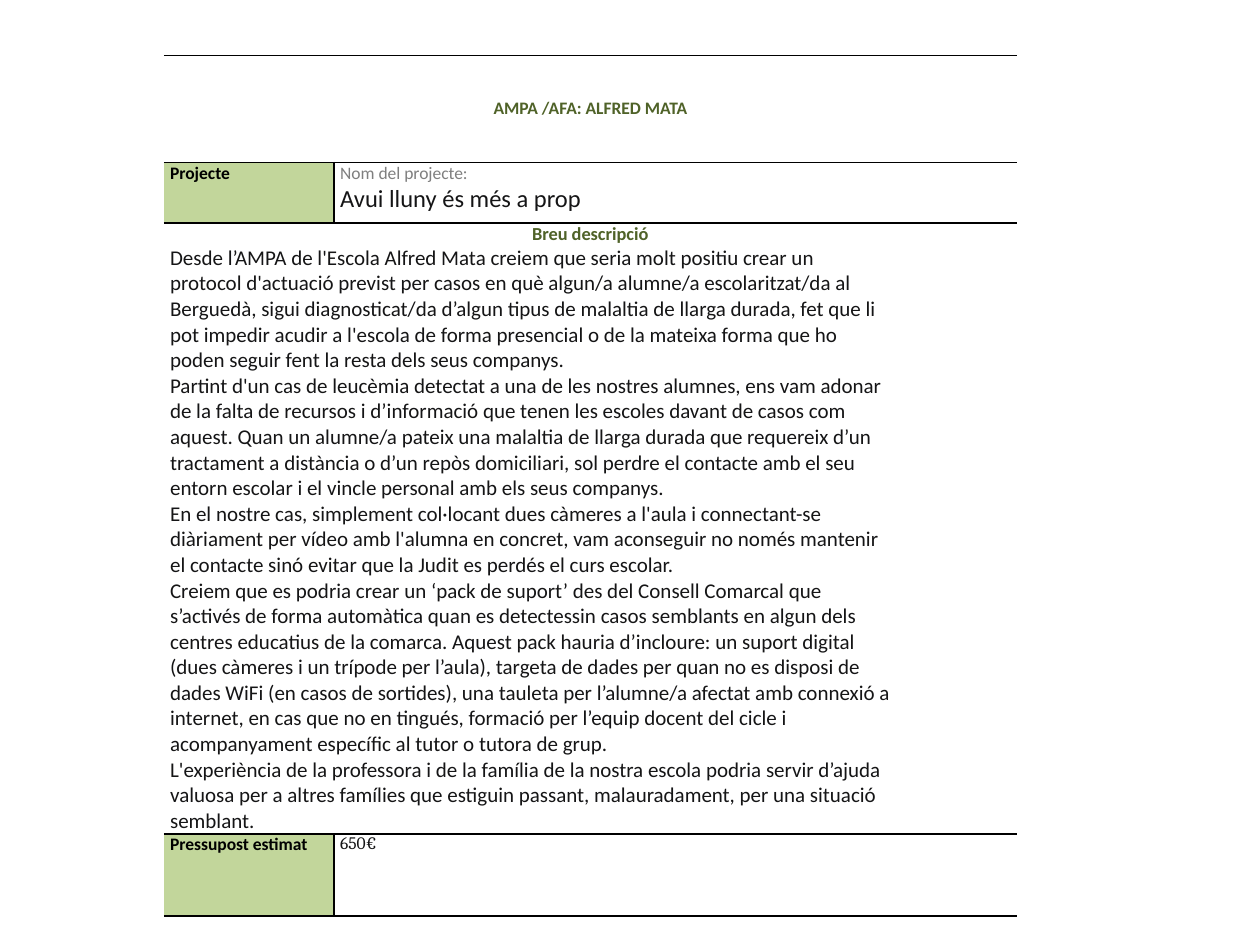
"""Build the project sheet slide of a school families' association."""
from dataclasses import dataclass

from lxml.etree import SubElement
from pptx import Presentation
from pptx.dml.color import RGBColor
from pptx.enum.text import MSO_ANCHOR as Anchor, PP_ALIGN as Align
from pptx.oxml.ns import qn
from pptx.table import Table, _Cell as Cell
from pptx.util import Inches, Pt

BLACK = RGBColor(0x00, 0x00, 0x00)
INK = RGBColor(0x15, 0x15, 0x16)
GREY = RGBColor(0x7F, 0x7F, 0x7F)
OLIVE = RGBColor(0x4F, 0x62, 0x28)
LABEL_GREEN = RGBColor(0xC2, 0xD6, 0x9B)

COLUMN_WIDTHS = (1.35, 5.42)
ROW_HEIGHTS = (0.85, 0.48, 4.55, 0.65)

PROPOSAL = """\
Desde l’AMPA de l'Escola Alfred Mata creiem que seria molt positiu crear un
protocol d'actuació previst per casos en què algun/a alumne/a escolaritzat/da al
Berguedà, sigui diagnosticat/da d’algun tipus de malaltia de llarga durada, fet que li
pot impedir acudir a l'escola de forma presencial o de la mateixa forma que ho
poden seguir fent la resta dels seus companys."""

BACKGROUND = """\
Partint d'un cas de leucèmia detectat a una de les nostres alumnes, ens vam adonar
de la falta de recursos i d’informació que tenen les escoles davant de casos com
aquest. Quan un alumne/a pateix una malaltia de llarga durada que requereix d’un
tractament a distància o d’un repòs domiciliari, sol perdre el contacte amb el seu
entorn escolar i el vincle personal amb els seus companys."""

EXPERIENCE = """\
En el nostre cas, simplement col·locant dues càmeres a l'aula i connectant-se
diàriament per vídeo amb l'alumna en concret, vam aconseguir no només mantenir
el contacte sinó evitar que la Judit es perdés el curs escolar."""

SUPPORT_PACK = """\
Creiem que es podria crear un ‘pack de suport’ des del Consell Comarcal que
s’activés de forma automàtica quan es detectessin casos semblants en algun dels
centres educatius de la comarca. Aquest pack hauria d’incloure: un suport digital
(dues càmeres i un trípode per l’aula), targeta de dades per quan no es disposi de
dades WiFi (en casos de sortides), una tauleta per l’alumne/a afectat amb connexió a
internet, en cas que no en tingués, formació per l’equip docent del cicle i
acompanyament específic al tutor o tutora de grup."""

CLOSING = """\
L'experiència de la professora i de la família de la nostra escola podria servir d’ajuda
valuosa per a altres famílies que estiguin passant, malauradament, per una situació
semblant."""


@dataclass(frozen=True)
class Field:
    """A labelled row of the sheet."""
    row: int
    label: str


PROJECT = Field(1, "Projecte")
BUDGET = Field(3, "Pressupost estimat")


def write(cell: Cell, text: str, *, size: float = 10, color: RGBColor = INK,
          bold: bool = False, font: str = "Calibri", align: Align = Align.LEFT) -> None:
    """Append each line of text to the cell as a paragraph."""
    frame = cell.text_frame
    for line in text.splitlines():
        para = frame.paragraphs[0] if not frame.text else frame.add_paragraph()
        para.alignment = align
        span = para.add_run()
        span.text = line
        span.font.size, span.font.bold, span.font.name = Pt(size), bold, font
        span.font.color.rgb = color


def style_cell(cell: Cell, sides: str, fill: RGBColor | None = None) -> None:
    """Set margins, the ruled sides (of L, R, T, B) and the fill."""
    cell.margin_left = cell.margin_right = Inches(0.05)
    cell.margin_top = cell.margin_bottom = 0
    properties = cell._tc.get_or_add_tcPr()
    for side in "LRTB":
        line = SubElement(properties, qn(f"a:ln{side}"), w=str(Pt(1)))
        if side in sides:
            paint = SubElement(line, qn("a:solidFill"))
            SubElement(paint, qn("a:srgbClr"), val=str(BLACK))
        else:
            SubElement(line, qn("a:noFill"))
    if fill is None:
        cell.fill.background()
    else:
        cell.fill.solid()
        cell.fill.fore_color.rgb = fill


def add_field(table: Table, field: Field) -> Cell:
    """Draw a label cell and return the value cell beside it."""
    label, value = table.cell(field.row, 0), table.cell(field.row, 1)
    style_cell(label, "RTB", LABEL_GREEN)
    style_cell(value, "LTB")
    write(label, field.label, color=BLACK, bold=True)
    return value


def add_band(table: Table, row: int) -> Cell:
    """Merge a row into one ruled cell and return it."""
    first, last = table.cell(row, 0), table.cell(row, 1)
    first.merge(last)
    for cell in (first, last):
        style_cell(cell, "TB")
    return first


def main() -> None:
    """Create the deck and save it."""
    deck = Presentation()
    deck.slide_width, deck.slide_height = Inches(10), Inches(7.5)
    page = deck.slides.add_slide(deck.slide_layouts[6])
    table = page.shapes.add_table(
        len(ROW_HEIGHTS), len(COLUMN_WIDTHS), Inches(1.3), Inches(0.44),
        Inches(sum(COLUMN_WIDTHS)), Inches(sum(ROW_HEIGHTS))).table
    table.first_row = table.horz_banding = False
    for column, width in zip(table.columns, COLUMN_WIDTHS):
        column.width = Inches(width)
    for row, height in zip(table.rows, ROW_HEIGHTS):
        row.height = Inches(height)

    heading = add_band(table, 0)
    heading.vertical_anchor = Anchor.MIDDLE
    write(heading, "AMPA /AFA: ALFRED MATA", color=OLIVE, bold=True, align=Align.CENTER)

    project = add_field(table, PROJECT)
    write(project, "Nom del projecte:", color=GREY)
    write(project, "Avui lluny és més a prop", size=14)

    description = add_band(table, 2)
    write(description, "Breu descripció", size=10.5, color=OLIVE, bold=True,
          align=Align.CENTER)
    for passage in (PROPOSAL, BACKGROUND, EXPERIENCE, SUPPORT_PACK, CLOSING):
        write(description, passage, size=12)

    write(add_field(table, BUDGET), "650€", font="Cambria")
    deck.save("out.pptx")


if __name__ == "__main__":
    main()
